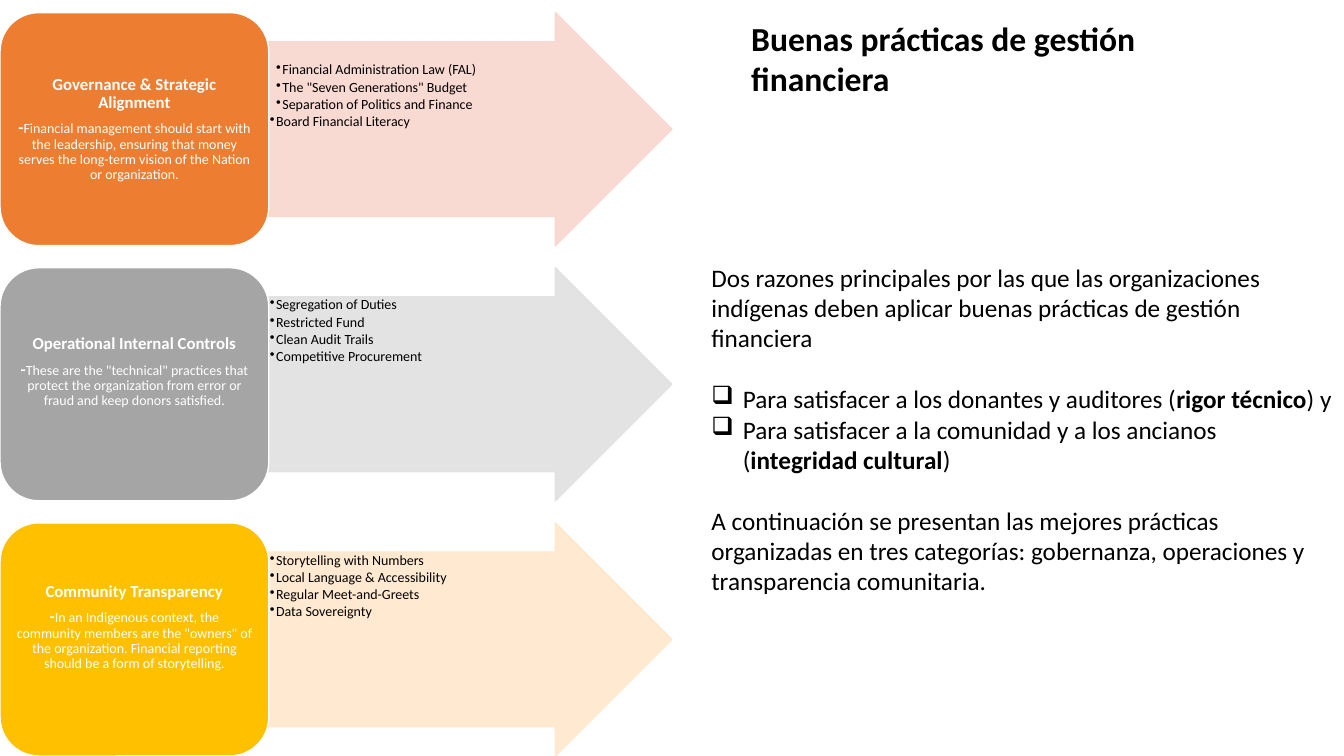
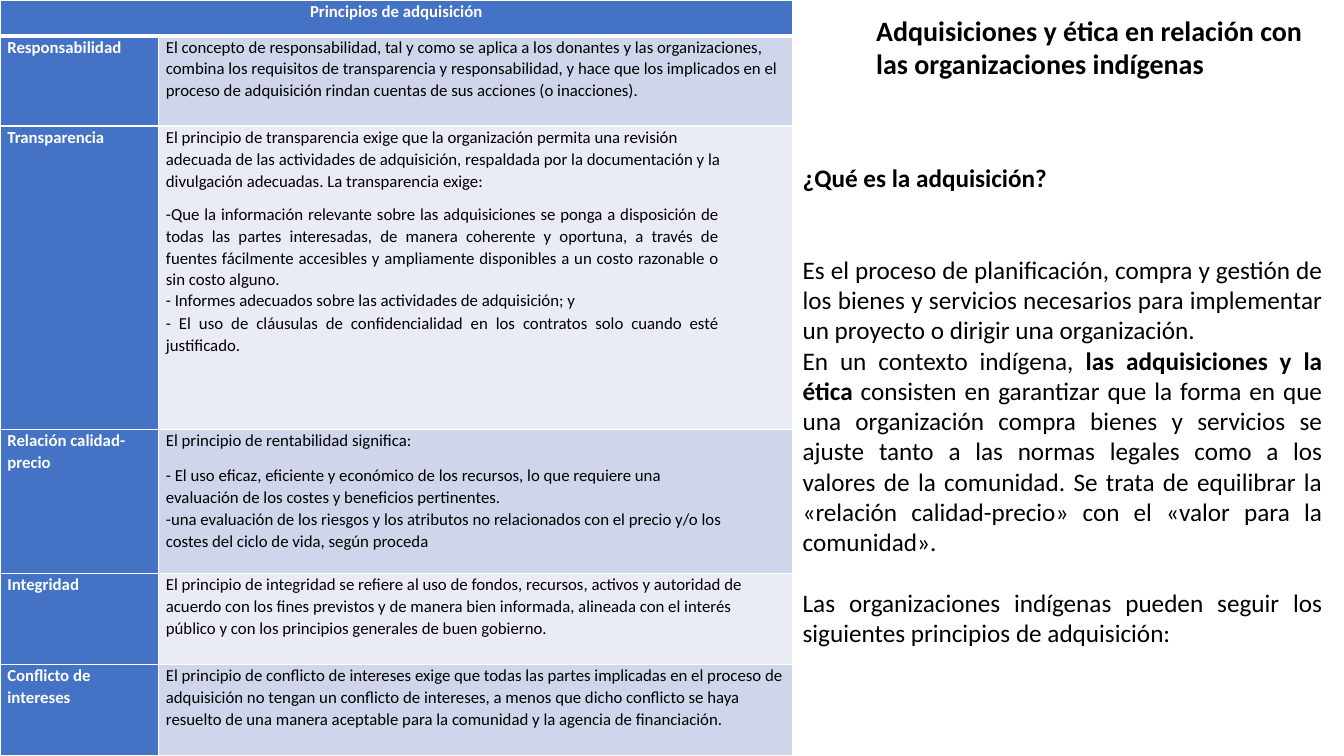
from lxml import etree
from pptx import Presentation
from pptx.dml.color import RGBColor
from pptx.enum.shapes import MSO_SHAPE
from pptx.enum.text import MSO_ANCHOR, PP_ALIGN
from pptx.oxml.ns import qn
from pptx.util import Pt

PX = 9525
FONT = "Calibri"
BLANK_LAYOUT = 6

ARROW, ROUNDED = MSO_SHAPE.RIGHT_ARROW, MSO_SHAPE.ROUNDED_RECTANGLE
TOP, MIDDLE = MSO_ANCHOR.TOP, MSO_ANCHOR.MIDDLE
CENTER, JUSTIFY = PP_ALIGN.CENTER, PP_ALIGN.JUSTIFY

BLACK = RGBColor(0x00, 0x00, 0x00)
WHITE = RGBColor(0xFF, 0xFF, 0xFF)
ORANGE = RGBColor(0xED, 0x7D, 0x31)
ORANGE_TINT = RGBColor(0xF8, 0xD7, 0xCE)
GRAY = RGBColor(0xA5, 0xA5, 0xA5)
GRAY_TINT = RGBColor(0xE1, 0xE1, 0xE1)
GOLD = RGBColor(0xFF, 0xC0, 0x00)
GOLD_TINT = RGBColor(0xFF, 0xE8, 0xCC)
BLUE = RGBColor(0x44, 0x72, 0xC4)
BANDS = (RGBColor(0xCF, 0xD5, 0xEA), RGBColor(0xE9, 0xEB, 0xF5))

BOLD = {"bold": True}
SMALL = {"size": Pt(10), "bold": False}
BODY_LINE = Pt(22)  # height of one line of 18 pt text

CATEGORY_TOP, CATEGORY_STEP, CATEGORY_HEIGHT = 12, 243, 222
CATEGORY_WIDTH, ARROW_WIDTH = 256, 384

# heading, description, colour, arrow tint, top inset, bottom inset, (indent level, practice)
CATEGORIES = [
    ("Governance & Strategic Alignment",
     "Financial management should start with the leadership, ensuring that money "
     "serves the long-term vision of the Nation or organization.",
     ORANGE, ORANGE_TINT, 20, 3,
     [(2, "Financial Administration Law (FAL)"),
      (2, "The \"Seven Generations\" Budget"),
      (2, "Separation of Politics and Finance"),
      (1, "Board Financial Literacy")]),
    ("Operational Internal Controls",
     "These are the \"technical\" practices that protect the organization from error "
     "or fraud and keep donors satisfied.",
     GRAY, GRAY_TINT, 1, 26,
     [(1, "Segregation of Duties"),
      (1, "Restricted Fund"),
      (1, "Clean Audit Trails"),
      (1, "Competitive Procurement")]),
    ("Community Transparency",
     "In an Indigenous context, the community members are the \"owners\" of the "
     "organization. Financial reporting should be a form of storytelling.",
     GOLD, GOLD_TINT, 1, 26,
     [(1, "Storytelling with Numbers"),
      (1, "Local Language & Accessibility"),
      (1, "Regular Meet-and-Greets"),
      (1, "Data Sovereignty")]),
]

CHECK = {"bullet": "❑", "indent": 30, "hanging": 30}
REASONS = [
    {"text": "Dos razones principales por las que las organizaciones indígenas deben "
             "aplicar buenas prácticas de gestión financiera"},
    {"text": ["Para satisfacer a los donantes y auditores (", ("rigor técnico", BOLD), ") y"],
     "space_before": BODY_LINE, **CHECK},
    {"text": ["Para satisfacer a la comunidad y a los ancianos (",
              ("integridad cultural", BOLD), ")"], **CHECK},
    {"text": "A continuación se presentan las mejores prácticas organizadas en tres "
             "categorías: gobernanza, operaciones y transparencia comunitaria.",
     "space_before": BODY_LINE},
]

PROCUREMENT = [
    {"text": [("¿Qué es la adquisición?", BOLD)]},
    {"text": "Es el proceso de planificación, compra y gestión de los bienes y servicios "
             "necesarios para implementar un proyecto o dirigir una organización.",
     "space_before": 2 * BODY_LINE},
    {"text": ["En un contexto indígena, ", ("las adquisiciones y la ética ", BOLD),
              "consisten en garantizar que la forma en que una organización compra bienes "
              "y servicios se ajuste tanto a las normas legales como a los valores de la "
              "comunidad. Se trata de equilibrar la «relación calidad-precio» con el "
              "«valor para la comunidad»."]},
    {"text": "Las organizaciones indígenas pueden seguir los siguientes principios de "
             "adquisición:", "space_before": BODY_LINE},
]

COLUMN_WIDTHS = (151, 604)
ROW_HEIGHTS = (34, 86, 289, 137, 87, 87)
PRINCIPLES = [
    ("Responsabilidad", [
        {"text": "El concepto de responsabilidad, tal y como se aplica a los donantes y las "
                 "organizaciones, combina los requisitos de transparencia y responsabilidad, "
                 "y hace que los implicados en el proceso de adquisición rindan cuentas de "
                 "sus acciones (o inacciones)."}]),
    ("Transparencia", [
        {"text": "El principio de transparencia exige que la organización permita una "
                 "revisión adecuada de las actividades de adquisición, respaldada por la "
                 "documentación y la divulgación adecuadas. La transparencia exige:",
         "right": 52},
        {"text": "-Que la información relevante sobre las adquisiciones se ponga a "
                 "disposición de todas las partes interesadas, de manera coherente y "
                 "oportuna, a través de fuentes fácilmente accesibles y ampliamente "
                 "disponibles a un costo razonable o sin costo alguno.",
         "right": 63, "alignment": JUSTIFY, "space_before": Pt(8)},
        {"text": "- Informes adecuados sobre las actividades de adquisición; y",
         "alignment": JUSTIFY, "line_spacing": Pt(14.6)},
        {"text": "- El uso de cláusulas de confidencialidad en los contratos solo cuando "
                 "esté justificado.", "alignment": JUSTIFY, "space_before": Pt(1)}]),
    ("Relación calidad-precio", [
        {"text": "El principio de rentabilidad significa:"},
        {"text": "- El uso eficaz, eficiente y económico de los recursos, lo que requiere "
                 "una evaluación de los costes y beneficios pertinentes.",
         "right": 52, "space_before": Pt(9)},
        {"text": "-una evaluación de los riesgos y los atributos no relacionados con el "
                 "precio y/o los costes del ciclo de vida, según proceda"}]),
    ("Integridad", [
        {"text": "El principio de integridad se refiere al uso de fondos, recursos, activos "
                 "y autoridad de acuerdo con los fines previstos y de manera bien informada, "
                 "alineada con el interés público y con los principios generales de buen "
                 "gobierno."}]),
    ("Conflicto de intereses", [
        {"text": "El principio de conflicto de intereses exige que todas las partes "
                 "implicadas en el proceso de adquisición no tengan un conflicto de "
                 "intereses, a menos que dicho conflicto se haya resuelto de una manera "
                 "aceptable para la comunidad y la agencia de financiación."}]),
]


def px(*lengths):
    return [length * PX for length in lengths]


def apply_format(target, values):
    for name, value in values.items():
        setattr(target, name, value)


def set_insets(target, left, top, right, bottom):
    sides = ("margin_left", "margin_top", "margin_right", "margin_bottom")
    apply_format(target, dict(zip(sides, px(left, top, right, bottom))))


def set_indents(para, values):
    """Take bullet, indent, hanging and right out of values and write them as XML."""
    properties = para._p.get_or_add_pPr()
    indents = {"marL": values.pop("indent", 0), "indent": -values.pop("hanging", 0),
               "marR": values.pop("right", 0)}
    for name, length in indents.items():
        if length:
            properties.set(name, str(length * PX))
    bullet = values.pop("bullet", None)
    if bullet:
        etree.SubElement(properties, qn("a:buChar")).set("char", bullet)


def write_text(frame, paras, size, color=BLACK, bold=False, **shared):
    """Fill a frame; shared holds paragraph settings that single paragraphs may override."""
    for index, content in enumerate(paras):
        para = frame.paragraphs[0] if index == 0 else frame.add_paragraph()
        values = {**shared, **content}
        spans = values.pop("text")
        set_indents(para, values)
        apply_format(para, values)
        for item in [spans] if isinstance(spans, str) else spans:
            text, changes = (item, {}) if isinstance(item, str) else item
            span = para.add_run()
            span.text = text
            apply_format(span.font, {"name": FONT, "size": Pt(size), "bold": bold, **changes})
            span.font.color.rgb = color


def add_text(page, bounds, paras, size, **options):
    frame = page.shapes.add_textbox(*px(*bounds)).text_frame
    frame.word_wrap = True
    write_text(frame, paras, size, **options)


def add_title(page, bounds, text, size):
    add_text(page, bounds, [{"text": text}], size, bold=True)


def add_panel(page, kind, bounds, fill, line, anchor, insets):
    panel = page.shapes.add_shape(kind, *px(*bounds))
    panel.shadow.inherit = False
    panel.fill.solid()
    panel.fill.fore_color.rgb = fill
    panel.line.color.rgb = line
    panel.line.width = Pt(1)
    frame = panel.text_frame
    apply_format(frame, {"word_wrap": True, "vertical_anchor": anchor})
    set_insets(frame, *insets)
    return panel


def set_opacity(shape, percent):
    for color in shape._element.spPr.iter(qn("a:srgbClr")):
        etree.SubElement(color, qn("a:alpha")).set("val", str(percent * 1000))


def add_category(page, top, category):
    heading, description, color, tint, inset_top, inset_bottom, practices = category
    arrow = add_panel(page, ARROW, (CATEGORY_WIDTH, top, ARROW_WIDTH, CATEGORY_HEIGHT),
                      tint, tint, TOP, (1, inset_top, 1, 1))
    arrow.adjustments[0] = 0.75
    arrow.adjustments[1] = 0.5
    set_opacity(arrow, 90)
    bullets = [{"text": text, "indent": 6 * level} for level, text in practices]
    write_text(arrow.text_frame, bullets, 10, bullet="•", hanging=6, line_spacing=0.9,
               space_after=Pt(1.5), alignment=PP_ALIGN.LEFT)

    box = add_panel(page, ROUNDED, (0, top, CATEGORY_WIDTH, CATEGORY_HEIGHT),
                    color, WHITE, MIDDLE, (5, 3, 5, inset_bottom))
    paras = [{"text": heading, "space_after": Pt(5)},
             {"text": ["-", (description, SMALL)]}]
    write_text(box.text_frame, paras, 12, WHITE, True, line_spacing=0.9, alignment=CENTER)


def set_borders(cell, **widths):
    """Draw white borders, 1 pt unless a side (L, R, T, B) is given another width."""
    properties = cell._tc.get_or_add_tcPr()
    for side in "LRTB":
        line = etree.SubElement(properties, qn(f"a:ln{side}"))
        line.set("w", str(Pt(widths.get(side, 1))))
        fill = etree.SubElement(line, qn("a:solidFill"))
        etree.SubElement(fill, qn("a:srgbClr")).set("val", str(WHITE))


def fill_cell(cell, paras, fill, borders, **options):
    set_borders(cell, **borders)
    cell.fill.solid()
    cell.fill.fore_color.rgb = fill
    set_insets(cell, 7, 0, 7, 0)
    write_text(cell.text_frame, paras, 12, line_spacing=1.07, **options)


def add_principles_table(page):
    size = px(0, 0, sum(COLUMN_WIDTHS), sum(ROW_HEIGHTS))
    table = page.shapes.add_table(len(ROW_HEIGHTS), len(COLUMN_WIDTHS), *size).table
    table.horz_banding = False
    for column, width in zip(table.columns, px(*COLUMN_WIDTHS)):
        column.width = width
    for row, height in zip(table.rows, px(*ROW_HEIGHTS)):
        row.height = height

    label_style = {"color": WHITE, "bold": True}
    header = table.cell(0, 0)
    header.merge(table.cell(0, 1))
    fill_cell(header, [{"text": "Principios de adquisición"}], BLUE, {"B": 3},
              alignment=CENTER, **label_style)
    for index, (label, paras) in enumerate(PRINCIPLES):
        borders = {"T": 3} if index == 0 else {}
        row = index + 1
        fill_cell(table.cell(row, 0), [{"text": label}], BLUE, borders, **label_style)
        fill_cell(table.cell(row, 1), paras, BANDS[index % 2], borders)


def main():
    deck = Presentation()
    deck.slide_width, deck.slide_height = px(1280, 720)
    layout = deck.slide_layouts[BLANK_LAYOUT]

    page = deck.slides.add_slide(layout)
    add_title(page, (706, 12, 455, 87), "Buenas prácticas de gestión financiera", 24)
    add_text(page, (668, 245, 612, 242), REASONS, 18)
    for index, category in enumerate(CATEGORIES):
        add_category(page, CATEGORY_TOP + index * CATEGORY_STEP, category)

    page = deck.slides.add_slide(layout)
    add_title(page, (825, 8, 455, 74),
              "Adquisiciones y ética en relación con las organizaciones indígenas", 20)
    add_text(page, (755, 150, 514, 475), PROCUREMENT, 18, alignment=JUSTIFY)
    add_principles_table(page)

    deck.save("out.pptx")


if __name__ == "__main__":
    main()
